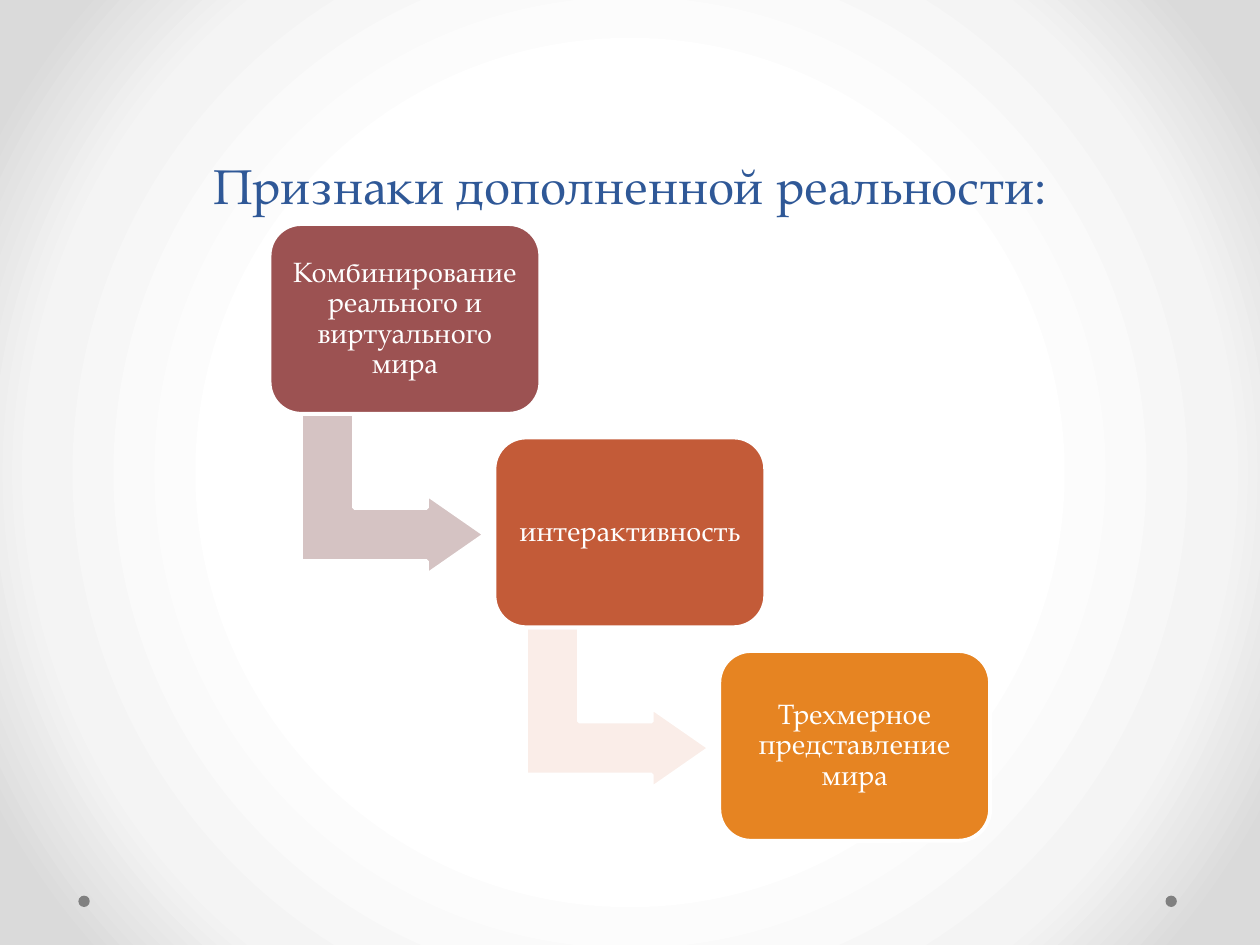
from dataclasses import dataclass

from lxml import etree
from pptx import Presentation
from pptx import util as u
from pptx.dml.color import RGBColor
from pptx.enum import shapes, text
from pptx.oxml import ns
from pptx.util import Pt

FONT = "TeX Gyre Pagella"
KIND = shapes.MSO_SHAPE
LEFT, TOP = 154, 128
WIDE, HIGH = 154.8, 108.5
STEP_X, STEP_Y = 128.5, 122


@dataclass
class Step:
    words: str
    fill: str
    arrow: str | None = None


STEPS = [
    Step("Комбинирование реального и виртуального мира", "9C5252", "D5C3C3"),
    Step("интерактивность", "C35B38", "FAEDE8"),
    Step("Трехмерное представление мира", "E68422"),
]


def color(code: str) -> RGBColor:
    return RGBColor.from_string(code)


def paint(slide) -> None:
    slide.background.fill.gradient()
    grad = slide._element.xpath(".//p:bgPr/a:gradFill")[0]
    for child in list(grad):
        grad.remove(child)
    stops = etree.SubElement(grad, ns.qn("a:gsLst"))
    for pos, code in ((50, "FFFFFF"), (76, "F4F4F4"), (92, "DADADA")):
        stop = etree.SubElement(stops, ns.qn("a:gs"), pos=str(pos * 1000))
        etree.SubElement(stop, ns.qn("a:srgbClr"), val=code)
    route = etree.SubElement(grad, ns.qn("a:path"), path="circle")
    sides = dict.fromkeys("ltrb", "50000")
    etree.SubElement(route, ns.qn("a:fillToRect"), **sides)


def add_shape(slide, kind, left: float, top: float, wide: float, high: float,
              fill: str, line: str | None = None):
    shape = slide.shapes.add_shape(kind, Pt(left), Pt(top), Pt(wide), Pt(high))
    shape.shadow.inherit = False
    shape.fill.solid()
    shape.fill.fore_color.rgb = color(fill)
    if line:
        shape.line.color.rgb = color(line)
        shape.line.width = Pt(2.25)
    else:
        shape.line.fill.background()
    return shape


def write(shape, words: str, size: float, code: str,
          space: float | u.Length) -> None:
    para = shape.text_frame.paragraphs[0]
    para.text = words
    para.alignment = text.PP_ALIGN.CENTER
    para.line_spacing = space
    para.font.name = FONT
    para.font.size = Pt(size)
    para.font.color.rgb = color(code)


def add_title(slide, words: str) -> None:
    title = slide.shapes.title
    title.left, title.top, title.width, title.height = Pt(36), Pt(0), Pt(648), Pt(126)
    title.text_frame.vertical_anchor = text.MSO_ANCHOR.BOTTOM
    write(title, words, 28, "2F5897", Pt(58))


def add_step(slide, step: Step, rank: int) -> None:
    left, top = LEFT + rank * STEP_X, TOP + rank * STEP_Y
    if step.arrow:
        arrow = add_shape(slide, KIND.BENT_UP_ARROW, left + 24.5, top + 102,
                          92, 105, step.arrow, "FFFFFF")
        arrow.rotation = 90
        for spot, value in enumerate((0.33, 0.25, 0.36)):
            arrow.adjustments[spot] = value
    box = add_shape(slide, KIND.ROUNDED_RECTANGLE, left, top, WIDE, HIGH,
                    step.fill, "FFFFFF")
    frame = box.text_frame
    frame.word_wrap = True
    frame.vertical_anchor = text.MSO_ANCHOR.MIDDLE
    frame.margin_left = frame.margin_right = Pt(5)
    frame.margin_top = frame.margin_bottom = Pt(5)
    write(box, step.words, 16, "FFFFFF", 0.9)
    frame.paragraphs[0].space_after = Pt(5.6)


def main() -> None:
    deck = Presentation()
    deck.slide_width, deck.slide_height = Pt(720), Pt(540)
    slide = deck.slides.add_slide(deck.slide_layouts[5])
    paint(slide)
    for left in (666, 44.8):
        add_shape(slide, KIND.OVAL, left, 511.8, 6.5, 6.5, "808080")
    add_title(slide, "Признаки дополненной реальности:")
    for rank, step in enumerate(STEPS):
        add_step(slide, step, rank)
    deck.save("out.pptx")


if __name__ == "__main__":
    main()
